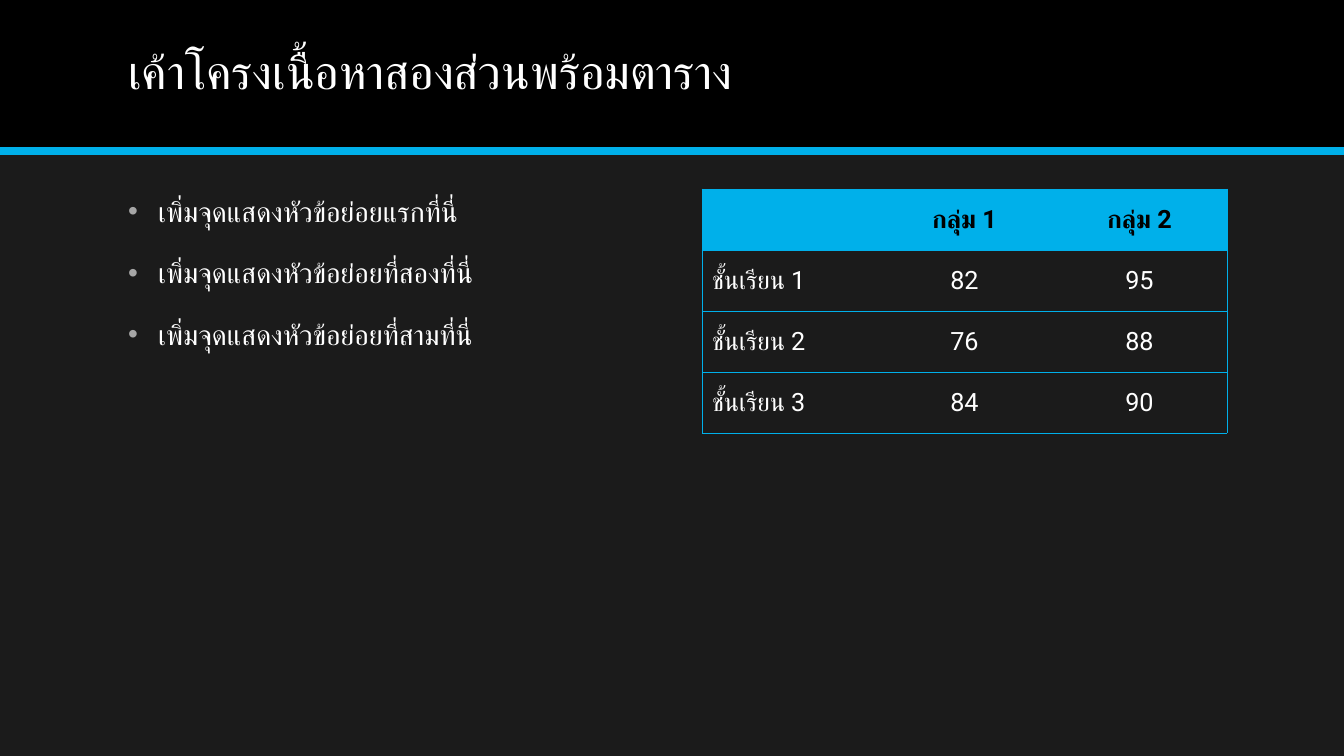
import pptx
import pptx.dml.color
import pptx.enum.shapes
import pptx.enum.text
import pptx.oxml.ns
import pptx.util
from lxml import etree

RGBColor = pptx.dml.color.RGBColor
BACKGROUND = RGBColor(0x1B, 0x1B, 0x1B)
BLACK = RGBColor(0x00, 0x00, 0x00)
WHITE = RGBColor(0xFF, 0xFF, 0xFF)
ACCENT = RGBColor(0x00, 0xB0, 0xEA)
BULLET_GRAY = RGBColor(0xA6, 0xA6, 0xA6)

FONT = "Roboto"
EMU_PER_PX = 914400 / 100.8
SLIDE_WIDTH, SLIDE_HEIGHT = 1344, 756
HEADER_HEIGHT = 151
COLUMN_WIDTH, ROW_HEIGHT = 175, 61

TITLE = "เค้าโครงเนื้อหาสองส่วนพร้อมตาราง"
BULLETS = [
    "เพิ่มจุดแสดงหัวข้อย่อยแรกที่นี่",
    "เพิ่มจุดแสดงหัวข้อย่อยที่สองที่นี่",
    "เพิ่มจุดแสดงหัวข้อย่อยที่สามที่นี่",
]
SCORES = [
    ["", "กลุ่ม 1", "กลุ่ม 2"],
    ["ชั้นเรียน 1", "82", "95"],
    ["ชั้นเรียน 2", "76", "88"],
    ["ชั้นเรียน 3", "84", "90"],
]


def px(length):
    return pptx.util.Emu(round(length * EMU_PER_PX))


def set_attributes(target, values):
    for name, value in values.items():
        setattr(target, name, value)


def add_child(parent, tag, **attributes):
    return etree.SubElement(parent, pptx.oxml.ns.qn(tag), attributes)


def write_run(paragraph, text, size, color, bold=False):
    run = paragraph.add_run()
    run.text = text
    set_attributes(run.font, {"name": FONT, "size": pptx.util.Pt(size), "bold": bold})
    run.font.color.rgb = color
    # Thai glyphs take the complex-script font
    add_child(run.font._element, "a:cs", typeface=FONT)


def place(shape, left, top, width, height):
    set_attributes(shape, {"left": px(left), "top": px(top),
                           "width": px(width), "height": px(height)})


def add_header(slide):
    band = slide.shapes.add_shape(pptx.enum.shapes.MSO_SHAPE.RECTANGLE,
                                  0, 0, px(SLIDE_WIDTH), px(HEADER_HEIGHT))
    band.shadow.inherit = False
    band.fill.solid()
    band.fill.fore_color.rgb = BLACK
    band.line.fill.background()

    rule = slide.shapes.add_connector(pptx.enum.shapes.MSO_CONNECTOR.STRAIGHT,
                                      0, px(HEADER_HEIGHT), px(SLIDE_WIDTH), px(HEADER_HEIGHT))
    rule.line.color.rgb = ACCENT
    rule.line.width = pptx.util.Pt(6)
    add_child(rule._element.spPr, "a:effectLst")

    # The header lies behind the title
    for shape in (band, rule):
        slide.shapes.title.element.addprevious(shape.element)


def fill_title(title):
    place(title, 118, 14, 1109, 121)
    set_attributes(title.text_frame, {
        "vertical_anchor": pptx.enum.text.MSO_ANCHOR.MIDDLE,
        "auto_size": pptx.enum.text.MSO_AUTO_SIZE.NONE,
    })
    paragraph = title.text_frame.paragraphs[0]
    set_attributes(paragraph, {"alignment": pptx.enum.text.PP_ALIGN.LEFT, "line_spacing": 0.9})
    write_run(paragraph, TITLE, 34, WHITE)


def format_bullet(paragraph):
    properties = paragraph._p.get_or_add_pPr()
    indent = px(30)
    properties.set("marL", str(indent))
    properties.set("indent", str(-indent))
    color = add_child(properties, "a:buClr")
    add_child(color, "a:srgbClr", val=str(BULLET_GRAY))
    add_child(properties, "a:buFont", typeface="Arial")
    add_child(properties, "a:buChar", char="•")


def fill_bullets(body):
    place(body, 118, 189, 524, 492)
    frame = body.text_frame
    frame.auto_size = pptx.enum.text.MSO_AUTO_SIZE.NONE
    for index, text in enumerate(BULLETS):
        paragraph = frame.add_paragraph() if index else frame.paragraphs[0]
        paragraph.space_before = pptx.util.Pt(20)
        format_bullet(paragraph)
        write_run(paragraph, text, 20, WHITE)


def set_border(cell, side, visible):
    line = add_child(cell._tc.get_or_add_tcPr(), f"a:ln{side}", w=str(pptx.util.Pt(0.5)))
    if visible:
        fill = add_child(line, "a:solidFill")
        add_child(fill, "a:srgbClr", val=str(ACCENT))
    else:
        add_child(line, "a:noFill")


def format_cell(cell, text, row, column):
    is_header = row == 0
    cell.vertical_anchor = pptx.enum.text.MSO_ANCHOR.MIDDLE

    # Outer frame and row rules, no column rules
    borders = {"L": column == 0, "R": column == len(SCORES[0]) - 1, "T": True, "B": True}
    for side, visible in borders.items():
        set_border(cell, side, visible)

    if is_header:
        cell.fill.solid()
        cell.fill.fore_color.rgb = ACCENT
    else:
        cell.fill.background()

    if text:
        paragraph = cell.text_frame.paragraphs[0]
        align = pptx.enum.text.PP_ALIGN
        paragraph.alignment = align.CENTER if column else align.LEFT
        write_run(paragraph, text, 18, BLACK if is_header else WHITE, is_header)


def add_score_table(slide):
    rows, columns = len(SCORES), len(SCORES[0])
    table = slide.shapes.add_table(rows, columns, px(702), px(189),
                                   px(columns * COLUMN_WIDTH), px(rows * ROW_HEIGHT)).table
    set_attributes(table, {"first_row": True, "horz_banding": False})
    for column in table.columns:
        column.width = px(COLUMN_WIDTH)
    for row in table.rows:
        row.height = px(ROW_HEIGHT)
    for row, texts in enumerate(SCORES):
        for column, text in enumerate(texts):
            format_cell(table.cell(row, column), text, row, column)


def main():
    presentation = pptx.Presentation()
    set_attributes(presentation, {"slide_width": px(SLIDE_WIDTH),
                                  "slide_height": px(SLIDE_HEIGHT)})
    slide = presentation.slides.add_slide(presentation.slide_layouts[1])
    slide.background.fill.solid()
    slide.background.fill.fore_color.rgb = BACKGROUND

    add_header(slide)
    fill_title(slide.shapes.title)
    fill_bullets(slide.placeholders[1])
    add_score_table(slide)
    presentation.save("out.pptx")


if __name__ == "__main__":
    main()
